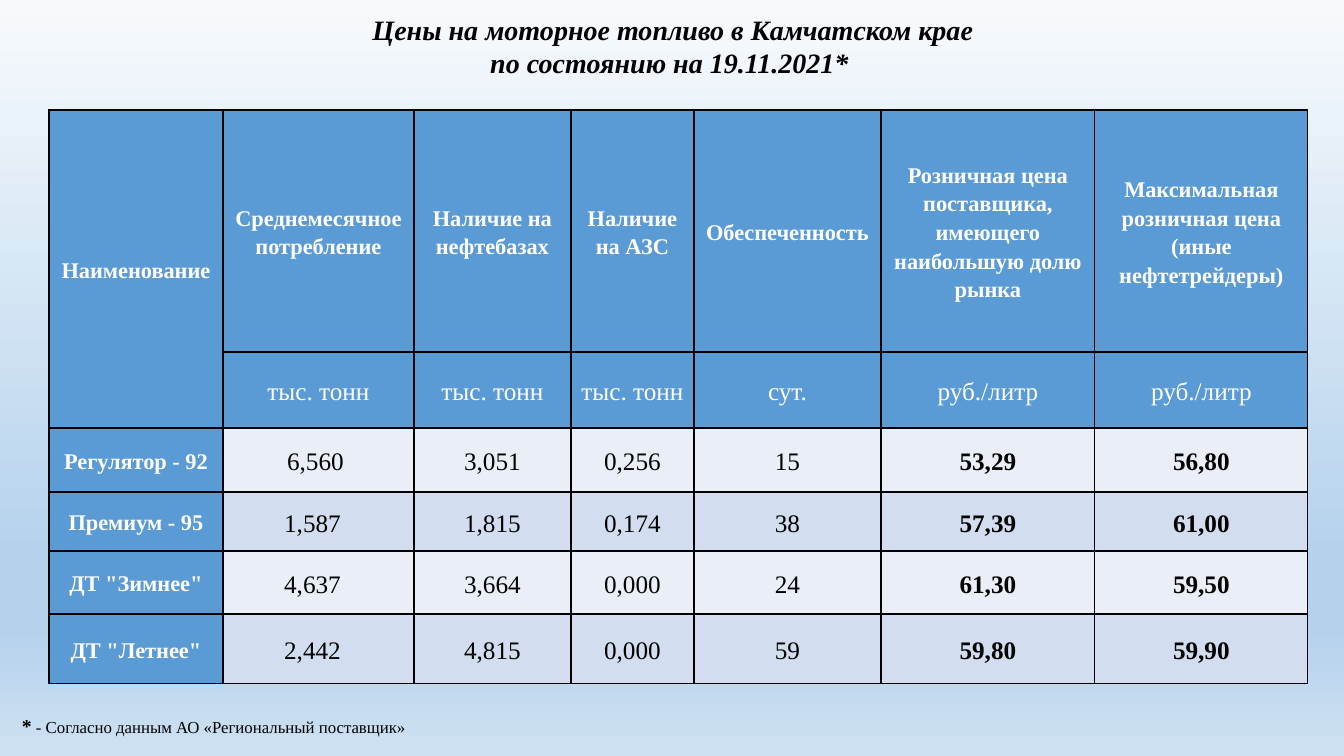
import lxml.etree
import pptx
import pptx.dml.color
import pptx.enum.text
import pptx.oxml.ns
import pptx.util
from dataclasses import dataclass

# Content
TITLE = ["Цены на моторное топливо в Камчатском крае", "по состоянию на 19.11.2021* "]
FOOTNOTE = ("*", " - Согласно данным АО «Региональный поставщик»")
ROWS = [
    ["Наименование", "Среднемесячное потребление", "Наличие на нефтебазах", "Наличие на АЗС",
     "Обеспеченность", "Розничная цена поставщика, имеющего наибольшую долю рынка",
     "Максимальная розничная цена\n(иные нефтетрейдеры)"],
    ["", "тыс. тонн", "тыс. тонн", "тыс. тонн", "сут.", "руб./литр", "руб./литр"],
    ["Регулятор - 92", "6,560", "3,051", "0,256", "15", "53,29", "56,80"],
    ["Премиум - 95", "1,587", "1,815", "0,174", "38", "57,39", "61,00"],
    ['ДТ "Зимнее"', "4,637", "3,664", "0,000", "24", "61,30", "59,50"],
    ['ДТ "Летнее"', "2,442", "4,815", "0,000", "59", "59,80", "59,90"],
]

# Layout in px
PX = 914400 / 100.8
SLIDE_SIZE = (1344, 756)
TITLE_BOX = (133, 7, 1080, 78)
FOOTNOTE_BOX = (12, 709, 603, 34)
TABLE_LEFT, TABLE_TOP = 49, 110
COLUMN_WIDTHS = [174, 191, 157, 123, 187, 214, 213]
ROW_HEIGHTS = [242, 76, 64, 59, 63, 70]
CELL_INSET = 7
CONSUMPTION_INSETS = {2: 6, 3: 12, 4: 12, 5: 12}
UNIT_ROW, FIRST_FUEL_ROW, FIRST_PRICE_COLUMN = 1, 2, 5


@dataclass(frozen=True)
class Theme:
    font: str = "Times New Roman"
    black: str = "000000"
    white: str = "FFFFFF"
    header: str = "5B9BD5"
    bands: tuple = ("EAEFF7", "D2DEEF")
    background: tuple = ((0, "F7FAFD"), (74, "B5D2EC"), (83, "B5D2EC"), (100, "CEE1F2"))
    title_size: int = 20
    header_size: int = 16
    value_size: int = 18
    mark_size: int = 14
    footnote_size: int = 12


THEME = Theme()
qn = pptx.oxml.ns.qn


def px(length):
    return pptx.util.Emu(round(length * PX))


def rgb(value):
    return pptx.dml.color.RGBColor.from_string(value)


def style_run(run, size, color=THEME.black, bold=False, italic=False):
    font = run.font
    font.name, font.size, font.bold, font.italic = THEME.font, pptx.util.Pt(size), bold, italic
    font.color.rgb = rgb(color)


def add_solid_fill(parent, color):
    fill = lxml.etree.SubElement(parent, qn("a:solidFill"))
    lxml.etree.SubElement(fill, qn("a:srgbClr"), val=color)


def paint_background(slide):
    fill = slide.background.fill
    fill.gradient()
    fill.gradient_angle = 270
    stops = next(slide.element.iter(qn("a:gsLst")))
    for stop in list(stops):
        stops.remove(stop)
    for position, color in THEME.background:
        stop = lxml.etree.SubElement(stops, qn("a:gs"), pos=str(position * 1000))
        lxml.etree.SubElement(stop, qn("a:srgbClr"), val=color)


def add_title(slide):
    title = slide.shapes.title
    title.left, title.top, title.width, title.height = map(px, TITLE_BOX)
    frame = title.text_frame
    frame.text = "\n".join(TITLE)
    frame.word_wrap = True
    frame.auto_size = pptx.enum.text.MSO_AUTO_SIZE.NONE
    frame.vertical_anchor = pptx.enum.text.MSO_ANCHOR.TOP
    for paragraph in frame.paragraphs:
        paragraph.alignment = pptx.enum.text.PP_ALIGN.CENTER
        style_run(paragraph.runs[0], THEME.title_size, bold=True, italic=True)


def add_borders(cell):
    properties = cell._tc.get_or_add_tcPr()
    for index, side in enumerate(("lnL", "lnR", "lnT", "lnB")):
        line = lxml.etree.Element(qn("a:" + side), w=str(pptx.util.Pt(1)))
        add_solid_fill(line, THEME.black)
        properties.insert(index, line)


def cell_style(row, column):
    """Return fill, text colour, size and boldness."""
    if row == UNIT_ROW:
        return THEME.header, THEME.white, THEME.value_size, False
    if row < FIRST_FUEL_ROW or column == 0:
        return THEME.header, THEME.white, THEME.header_size, True
    band = THEME.bands[(row - FIRST_FUEL_ROW) % 2]
    return band, THEME.black, THEME.value_size, column >= FIRST_PRICE_COLUMN


def fill_cell(cell, text, row, column):
    fill, color, size, bold = cell_style(row, column)
    cell.fill.solid()
    cell.fill.fore_color.rgb = rgb(fill)
    add_borders(cell)
    extra = CONSUMPTION_INSETS.get(row, 0) if column == 1 else 0
    cell.margin_left, cell.margin_right = px(CELL_INSET), px(CELL_INSET + extra)
    cell.margin_top = cell.margin_bottom = 0
    cell.vertical_anchor = pptx.enum.text.MSO_ANCHOR.MIDDLE
    if not text:
        return
    cell.text_frame.text = text
    for paragraph in cell.text_frame.paragraphs:
        paragraph.alignment = pptx.enum.text.PP_ALIGN.CENTER
        paragraph.line_spacing = 1.15
        style_run(paragraph.runs[0], size, color, bold)


def add_price_table(slide):
    table = slide.shapes.add_table(
        len(ROWS), len(COLUMN_WIDTHS), px(TABLE_LEFT), px(TABLE_TOP),
        px(sum(COLUMN_WIDTHS)), px(sum(ROW_HEIGHTS))).table
    for column, width in zip(table.columns, COLUMN_WIDTHS):
        column.width = px(width)
    for row, height in zip(table.rows, ROW_HEIGHTS):
        row.height = px(height)
    for row, texts in enumerate(ROWS):
        for column, text in enumerate(texts):
            fill_cell(table.cell(row, column), text, row, column)
    table.cell(0, 0).merge(table.cell(UNIT_ROW, 0))


def add_footnote(slide):
    frame = slide.shapes.add_textbox(*map(px, FOOTNOTE_BOX)).text_frame
    frame.word_wrap = True
    mark, note = (frame.paragraphs[0].add_run() for _ in FOOTNOTE)
    mark.text, note.text = FOOTNOTE
    style_run(mark, THEME.mark_size, bold=True)
    style_run(note, THEME.footnote_size)


def main():
    presentation = pptx.Presentation()
    presentation.slide_width, presentation.slide_height = map(px, SLIDE_SIZE)
    slide = presentation.slides.add_slide(presentation.slide_layouts[5])
    paint_background(slide)
    add_title(slide)
    add_price_table(slide)
    add_footnote(slide)
    presentation.save("out.pptx")


if __name__ == "__main__":
    main()
